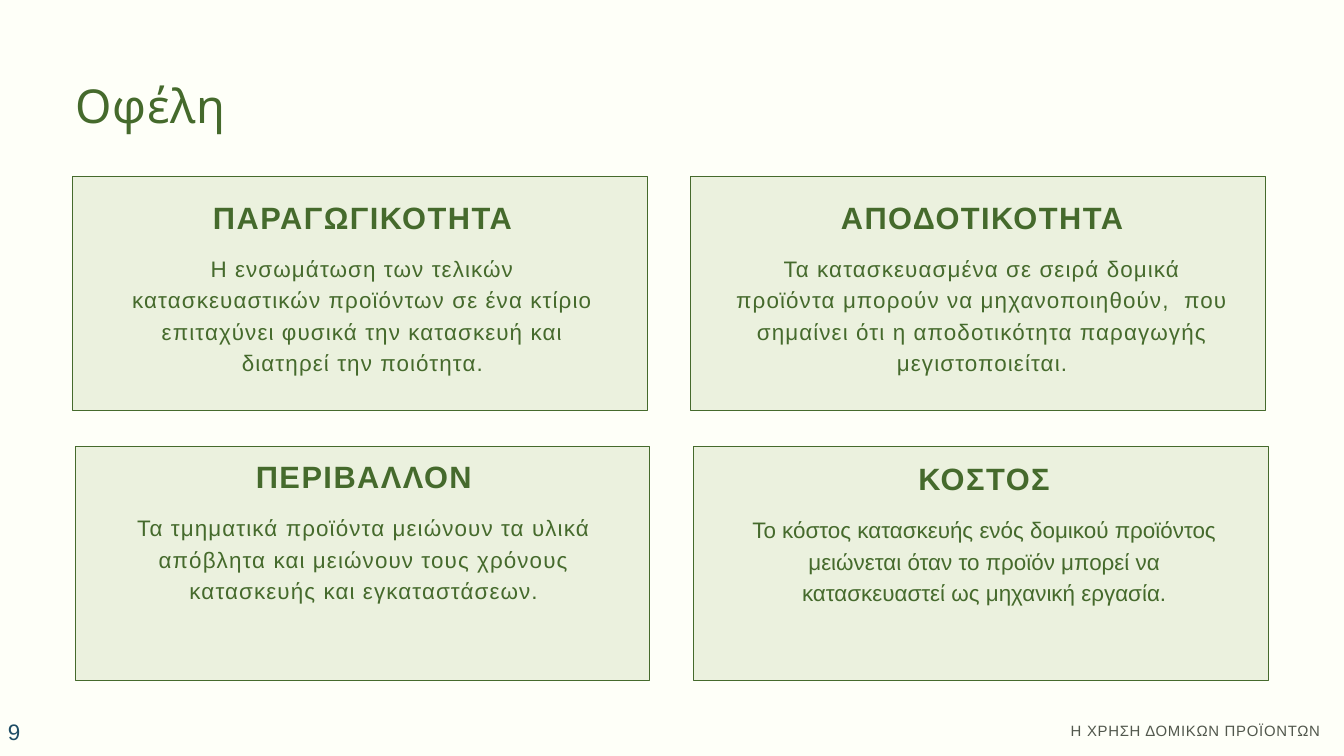
from pptx import Presentation, util as u
from pptx.dml.color import RGBColor
from pptx.enum import shapes, text

WIDTH, HEIGHT = 20, 11.25
GREEN, PALE_GREEN, CREAM, GREY, NAVY = "456A2C", "EBF1DE", "FEFFF8", "52584D", "1E4D65"
CENTER, RIGHT = text.PP_ALIGN.CENTER, text.PP_ALIGN.RIGHT

TITLE = dict(size=50, name="League Spartan", color=GREEN, tracking=1, leading=66.8)
HEADING = dict(size=33, bold=True, color=GREEN, tracking=1.6, leading=41.2, alignment=CENTER)
BODY = dict(size=24, color=GREEN, tracking=1.2, leading=33.6, alignment=CENTER)
FOOTER = dict(size=16, color=GREY, tracking=0.8, leading=22.4, alignment=RIGHT)
NUMBER = dict(size=24, color=NAVY, tracking=1.2)

GRID_LEFT, GRID_TOP = 1.08, 2.62
COLUMN_STEP, ROW_STEP, ROW_SHIFT = 9.2, 4.02, 0.04
CARD_WIDTH, CARD_HEIGHT = 8.55, 3.48
TEXT_WIDTH, HEADING_HEIGHT, BODY_HEIGHT, BODY_DROP = 7.39, 0.57, 1.89, 0.8

CARDS = [
    dict(column=0, row=1, inset=(0.6, 0.15), heading="ΠΕΡΙΒΑΛΛΟΝ",
         body="Τα τμηματικά προϊόντα μειώνουν τα υλικά απόβλητα και μειώνουν "
              "τους χρόνους κατασκευής και εγκαταστάσεων."),
    dict(column=0, row=0, inset=(0.62, 0.31), heading="ΠΑΡΑΓΩΓΙΚΟΤΗΤΑ",
         body="Η ενσωμάτωση των τελικών κατασκευαστικών προϊόντων σε ένα κτίριο "
              "επιταχύνει φυσικά την κατασκευή και διατηρεί την ποιότητα."),
    dict(column=1, row=0, inset=(0.64, 0.31), heading="ΑΠΟΔΟΤΙΚΟΤΗΤΑ",
         body="Τα κατασκευασμένα σε σειρά δομικά προϊόντα μπορούν να μηχανοποιηθούν,  "
              "που σημαίνει ότι η αποδοτικότητα παραγωγής μεγιστοποιείται."),
    dict(column=1, row=1, inset=(0.63, 0.18), heading="ΚΟΣΤΟΣ", tracking=0,
         body="Το κόστος κατασκευής ενός δομικού προϊόντος μειώνεται όταν το προϊόν "
              "μπορεί να κατασκευαστεί ως μηχανική εργασία."),
]


def paint(color_format, color):
    """Give a colour format an RGB value from a hex string."""
    color_format.rgb = RGBColor.from_string(color)


def inches(box):
    """Turn left, top, width and height into lengths."""
    return [u.Inches(value) for value in box]


def add_text(slide, box, words, style, **frame_values):
    """Place one styled paragraph in a text box."""
    frame = slide.shapes.add_textbox(*inches(box)).text_frame
    values = dict(word_wrap=True, margin_left=0, margin_top=0, margin_right=0,
                  margin_bottom=0, auto_size=text.MSO_AUTO_SIZE.SHAPE_TO_FIT_TEXT)
    for name, value in (values | frame_values).items():
        setattr(frame, name, value)
    paragraph = frame.paragraphs[0]
    paragraph.alignment = style.get("alignment")
    if "leading" in style:
        paragraph.line_spacing = u.Pt(style["leading"])
    run = paragraph.add_run()
    run.text = words
    font_values = dict(name=style.get("name", "Arial"), size=u.Pt(style["size"]),
                       bold=style.get("bold", False))
    for name, value in font_values.items():
        setattr(run.font, name, value)
    paint(run.font.color, style["color"])
    run.font._element.set("spc", str(round(style["tracking"] * 100)))


def add_card(slide, box, inset, heading, body, tracking=BODY["tracking"]):
    """Draw a framed card with its heading and body."""
    card = slide.shapes.add_shape(shapes.MSO_SHAPE.RECTANGLE, *inches(box))
    card.shadow.inherit = False
    card.fill.solid()
    paint(card.fill.fore_color, PALE_GREEN)
    paint(card.line.color, GREEN)
    card.line.width = u.Pt(0.75)
    left, top = box[0] + inset[0], box[1] + inset[1]
    add_text(slide, (left, top, TEXT_WIDTH, HEADING_HEIGHT), heading, HEADING)
    add_text(slide, (left, top + BODY_DROP, TEXT_WIDTH, BODY_HEIGHT), body,
             BODY | dict(tracking=tracking))


def add_cards(slide):
    """Lay the benefit cards out on a grid of two columns and two rows."""
    for card in CARDS:
        content = dict(card)
        column, row = content.pop("column"), content.pop("row")
        left = GRID_LEFT + column * COLUMN_STEP + row * ROW_SHIFT
        top = GRID_TOP + row * ROW_STEP
        add_card(slide, (left, top, CARD_WIDTH, CARD_HEIGHT), **content)


def add_footer(slide):
    """Place the running footer and the page number."""
    add_text(slide, (11.33, 10.7, 8.32, 0.3), "Η ΧΡΗΣΗ ΔΟΜΙΚΩΝ ΠΡΟΪΟΝΤΩΝ", FOOTER)
    add_text(slide, (0.02, 10.69, 2.33, 0.4), "9", NUMBER, margin_left=u.Inches(0.1),
             margin_right=u.Inches(0.1), vertical_anchor=text.MSO_ANCHOR.MIDDLE,
             auto_size=text.MSO_AUTO_SIZE.NONE)


def main():
    """Build the benefits slide and save it."""
    presentation = Presentation()
    presentation.slide_width, presentation.slide_height = u.Inches(WIDTH), u.Inches(HEIGHT)
    slide = presentation.slides.add_slide(presentation.slide_layouts[6])
    slide.background.fill.solid()
    paint(slide.background.fill.fore_color, CREAM)
    add_text(slide, (1.12, 1.05, 17.71, 0.94), "Οφέλη", TITLE)
    add_cards(slide)
    add_footer(slide)
    presentation.save("out.pptx")


if __name__ == "__main__":
    main()
